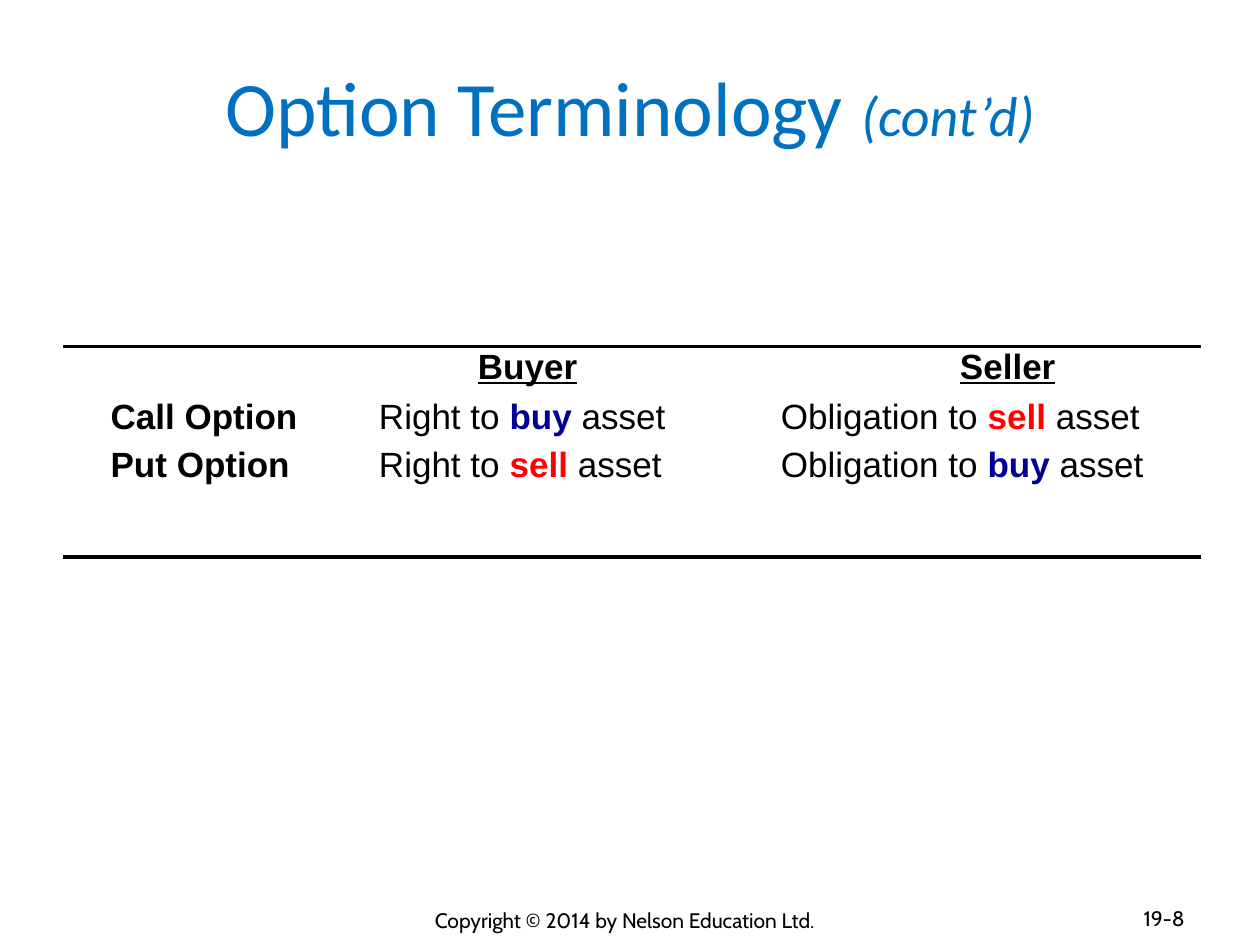
"""Build the option terminology slide."""
import pptx
import pptx.dml.color
import pptx.enum.shapes
import pptx.enum.text
import pptx.oxml.ns
import pptx.util
from lxml import etree
from pptx.util import Inches

ALIGN = pptx.enum.text.PP_ALIGN
ANCHOR = pptx.enum.text.MSO_ANCHOR
BLACK, TITLE_BLUE = "000000", "0070C0"
BUY = ("buy", {"bold": True, "color": "000099"})
SELL = ("sell", {"bold": True, "color": "FF0000"})
TAB_STOPS = [(2.13, "l"), (3.31, "ctr"), (5.32, "l"), (7.12, "ctr"), (8.68, "r")]


def rgb(value):
    return pptx.dml.color.RGBColor.from_string(value)


def add_run(paragraph, text, size=20, font="Arial", color=BLACK,
            bold=False, italic=False, underline=False):
    run = paragraph.add_run()
    run.text = text
    run.font.size = pptx.util.Pt(size)
    run.font.name = font
    run.font.color.rgb = rgb(color)
    run.font.bold = bold
    run.font.italic = italic
    run.font.underline = underline


def add_text_frame(slide, left, top, width, height, anchor=ANCHOR.MIDDLE):
    box = slide.shapes.add_textbox(
        Inches(left), Inches(top), Inches(width), Inches(height))
    frame = box.text_frame
    frame.word_wrap = True
    frame.vertical_anchor = anchor
    return frame


def add_line_of_text(slide, place, align, runs):
    paragraph = add_text_frame(slide, *place).paragraphs[0]
    paragraph.alignment = align
    for text, style in runs:
        add_run(paragraph, text, **style)


def add_tab_stops(paragraph):
    qn = pptx.oxml.ns.qn
    properties = paragraph._p.get_or_add_pPr()
    stops = etree.SubElement(properties, qn("a:tabLst"))
    for position, align in TAB_STOPS:
        etree.SubElement(stops, qn("a:tab"), pos=str(Inches(position)), algn=align)


def add_tabbed_rows(slide, place, rows):
    frame = add_text_frame(slide, *place, anchor=ANCHOR.TOP)
    for index, row in enumerate(rows):
        paragraph = frame.add_paragraph() if index else frame.paragraphs[0]
        add_tab_stops(paragraph)
        paragraph.line_spacing = 0.7 if index else 0.8
        if index:
            paragraph.space_before = pptx.util.Pt(11)
        for text, style in row:
            add_run(paragraph, text, **style)


def option_row(name, buyer_action, seller_action):
    return [(name, {"bold": True}), ("\tRight to ", {}), buyer_action,
            (" asset\tObligation to ", {}), seller_action, (" asset", {})]


def add_rule(slide, y):
    rule = slide.shapes.add_connector(
        pptx.enum.shapes.MSO_CONNECTOR.STRAIGHT,
        Inches(0.5), Inches(y), Inches(9.53), Inches(y))
    rule.line.color.rgb = rgb(BLACK)
    rule.line.width = pptx.util.Pt(2.25)
    etree.SubElement(rule._element.spPr, pptx.oxml.ns.qn("a:effectLst"))


def main():
    deck = pptx.Presentation()
    deck.slide_width, deck.slide_height = Inches(10), Inches(7.5)
    slide = deck.slides.add_slide(deck.slide_layouts[6])

    title = {"font": "Calibri", "color": TITLE_BLUE}
    add_line_of_text(slide, (0, 0.21, 10, 1.25), ALIGN.CENTER, [
        ("Option Terminology ", {"size": 44, **title}),
        ("(cont’d)", {"size": 32, "italic": True, **title})])

    heading = {"bold": True, "underline": True}
    add_tabbed_rows(slide, (0.78, 2.75, 8.97, 1.47), [
        [("\t\t", {}), ("Buyer", heading), ("\t\t", {}), ("Seller", heading)],
        option_row("Call Option", BUY, SELL),
        option_row("Put Option", SELL, BUY)])
    for y in (4.42, 2.75):
        add_rule(slide, y)

    footer = {"size": 12, "font": "Cabin"}
    add_line_of_text(slide, (2.25, 7.1, 5.42, 0.4), ALIGN.CENTER,
                     [("Copyright © 2014 by Nelson Education Ltd.", footer)])
    add_line_of_text(slide, (8.75, 7.09, 0.75, 0.4), ALIGN.RIGHT, [("19-8", footer)])
    deck.save("out.pptx")


if __name__ == "__main__":
    main()
